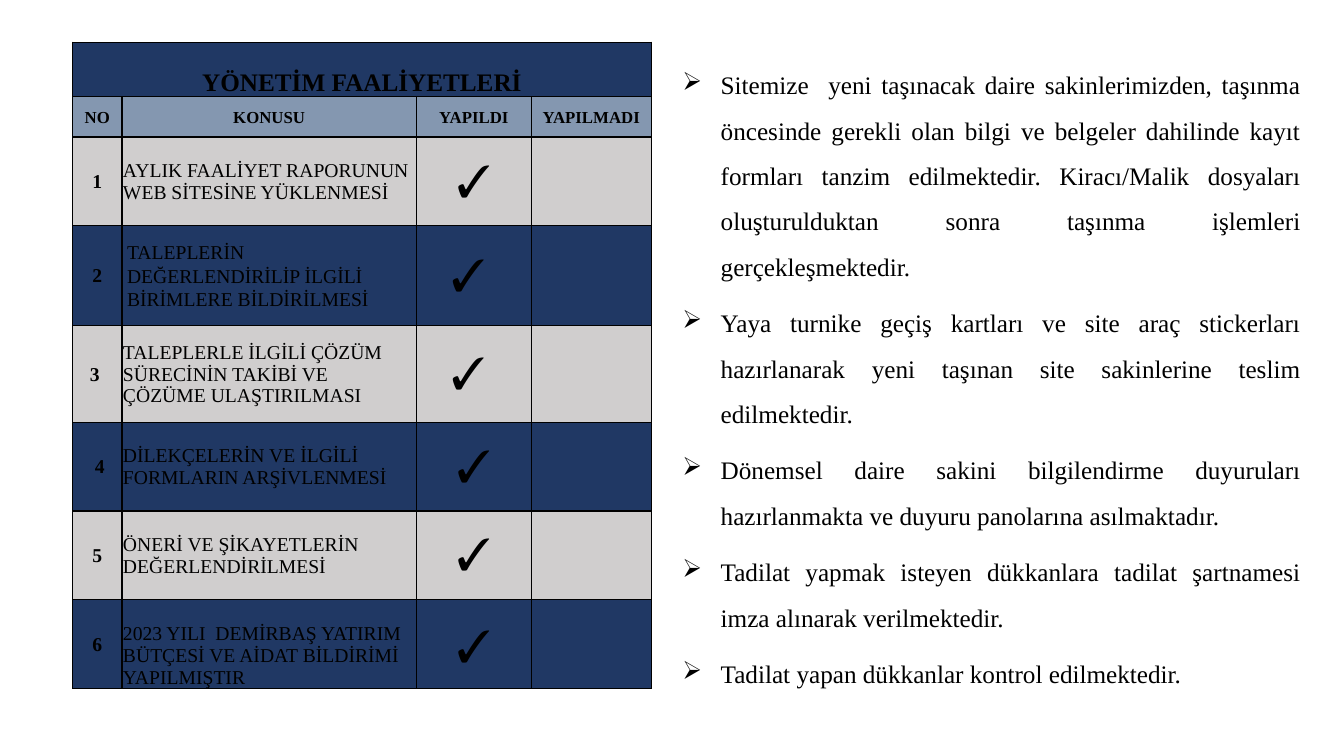
"""Builds the slide on site management activities: a checklist table and notes."""
from lxml import etree
from pptx import Presentation
from pptx.dml.color import RGBColor
from pptx.enum.text import MSO_ANCHOR, MSO_AUTO_SIZE, PP_ALIGN
from pptx.oxml.ns import qn
from pptx.util import Inches, Pt

CENTER, LEFT, JUSTIFY = PP_ALIGN.CENTER, PP_ALIGN.LEFT, PP_ALIGN.JUSTIFY
MIDDLE, BOTTOM = MSO_ANCHOR.MIDDLE, MSO_ANCHOR.BOTTOM
GROW = MSO_AUTO_SIZE.SHAPE_TO_FIT_TEXT

BLACK = RGBColor(0x00, 0x00, 0x00)
NAVY = RGBColor(0x20, 0x38, 0x64)
STEEL = RGBColor(0x84, 0x97, 0xB0)
GREY = RGBColor(0xD0, 0xCE, 0xCE)

TITLE = "YÖNETİM FAALİYETLERİ"
HEADINGS = ["NO", "KONUSU", "YAPILDI", "YAPILMADI"]
ACTIVITIES = [
    ("1", "AYLIK FAALİYET RAPORUNUN WEB SİTESİNE YÜKLENMESİ", "✓"),
    ("2", "TALEPLERİN DEĞERLENDİRİLİP İLGİLİ BİRİMLERE BİLDİRİLMESİ", "✓ "),
    ("3 ", "TALEPLERLE İLGİLİ ÇÖZÜM SÜRECİNİN TAKİBİ VE ÇÖZÜME ULAŞTIRILMASI", "✓ "),
    (" 4", "DİLEKÇELERİN VE İLGİLİ FORMLARIN ARŞİVLENMESİ", "✓"),
    ("5", "ÖNERİ VE ŞİKAYETLERİN DEĞERLENDİRİLMESİ", "✓"),
    ("6", "2023 YILI  DEMİRBAŞ YATIRIM BÜTÇESİ VE AİDAT BİLDİRİMİ YAPILMIŞTIR", "✓"),
]
NOTES = [
    "Sitemize  yeni taşınacak daire sakinlerimizden, taşınma öncesinde gerekli olan "
    "bilgi ve belgeler dahilinde kayıt formları tanzim edilmektedir. Kiracı/Malik "
    "dosyaları oluşturulduktan sonra taşınma işlemleri gerçekleşmektedir.",
    "Yaya turnike geçiş kartları ve site araç stickerları hazırlanarak yeni taşınan "
    "site sakinlerine teslim edilmektedir.",
    "Dönemsel daire sakini bilgilendirme duyuruları hazırlanmakta ve duyuru "
    "panolarına asılmaktadır.",
    "Tadilat yapmak isteyen dükkanlara tadilat şartnamesi imza alınarak verilmektedir.",
    "Tadilat yapan dükkanlar kontrol edilmektedir.",
]
COLUMN_WIDTHS = [0.49, 2.92, 1.14, 1.19]
ROW_HEIGHTS = [0.54, 0.4, 0.88, 0.99, 0.96, 0.88, 0.88, 0.88]
TIGHT = (0.01, 0.01, 0.01, 0)
ROOMY = (0.05, 0, 0.05, 0)
RAISED = (0.01, 0.01, 0.01, 0.16)


def apply(target, values):
    """Set each named attribute on the target."""
    for name, value in values.items():
        setattr(target, name, value)


class ActivitySlide:
    """Holds the text style and the slide being filled."""

    font_name = "Times New Roman"
    ink = BLACK

    def __init__(self, slide):
        """Keep the slide to draw on."""
        self.slide = slide

    def style(self, paragraph, size, bold=False, **layout):
        """Format one paragraph and its font."""
        apply(paragraph, layout)
        apply(paragraph.font, {"name": self.font_name, "size": Pt(size), "bold": bold})
        paragraph.font.color.rgb = self.ink

    def border(self, cell):
        """Draw a thin line on all four sides of a cell."""
        properties = cell._tc.get_or_add_tcPr()
        for side in ("a:lnL", "a:lnR", "a:lnT", "a:lnB"):
            line = etree.SubElement(properties, qn(side), w=str(Pt(1)))
            fill = etree.SubElement(line, qn("a:solidFill"))
            etree.SubElement(fill, qn("a:srgbClr"), val=str(self.ink))

    def table(self, left, top, widths, heights):
        """Add a plain table with the given column widths and row heights."""
        table = self.slide.shapes.add_table(
            len(heights), len(widths), Inches(left), Inches(top),
            Inches(sum(widths)), Inches(sum(heights))).table
        apply(table, {"first_row": False, "horz_banding": False})
        for column, width in zip(table.columns, widths):
            column.width = Inches(width)
        for row, height in zip(table.rows, heights):
            row.height = Inches(height)
        for cell in table.iter_cells():
            self.border(cell)
        return table

    def cell(self, cell, fill, text="", size=14, bold=False, align=CENTER,
             anchor=MIDDLE, insets=TIGHT, spacing=1.0):
        """Fill a cell and write its text."""
        cell.fill.solid()
        cell.fill.fore_color.rgb = fill
        sides = ("margin_left", "margin_top", "margin_right", "margin_bottom")
        apply(cell, dict(zip(sides, map(Inches, insets)), vertical_anchor=anchor))
        if text:
            cell.text = text
            self.style(cell.text_frame.paragraphs[0], size, bold,
                       alignment=align, line_spacing=spacing)

    def bullets(self, left, top, width, height, items):
        """Add a text box of justified arrow bullets."""
        frame = self.slide.shapes.add_textbox(
            Inches(left), Inches(top), Inches(width), Inches(height)).text_frame
        apply(frame, {"word_wrap": True, "auto_size": GROW, "text": "\n".join(items)})
        for paragraph in frame.paragraphs:
            properties = paragraph._p.get_or_add_pPr()
            apply(paragraph, {"line_spacing": 1.5, "space_after": Pt(8)})
            etree.SubElement(properties, qn("a:buChar"), char="➢")
            properties.set("marL", str(Inches(0.38)))
            properties.set("indent", str(Inches(-0.38)))
            self.style(paragraph, 18, alignment=JUSTIFY)


def main():
    """Build and save the presentation."""
    deck = Presentation()
    apply(deck, {"slide_width": Inches(13.33), "slide_height": Inches(7.5)})
    page = ActivitySlide(deck.slides.add_slide(deck.slide_layouts[6]))

    checklist = page.table(0.72, 0.42, COLUMN_WIDTHS, ROW_HEIGHTS)
    checklist.cell(0, 0).merge(checklist.cell(0, len(HEADINGS) - 1))
    page.cell(checklist.cell(0, 0), NAVY, TITLE, 18, True, anchor=BOTTOM)
    for column, heading in enumerate(HEADINGS):
        roomy = {"insets": ROOMY, "spacing": 1.07} if heading == "KONUSU" else {}
        page.cell(checklist.cell(1, column), STEEL, heading, 12, True, **roomy)

    topic_formats = {"2": {"insets": ROOMY, "spacing": 1.07}, "6": {"anchor": BOTTOM}}
    check_formats = {"6": {"anchor": BOTTOM, "insets": RAISED}}
    for row, (number, topic, check) in enumerate(ACTIVITIES, start=2):
        fill = NAVY if row % 2 else GREY
        page.cell(checklist.cell(row, 0), fill, number, bold=True)
        page.cell(checklist.cell(row, 1), fill, topic, align=LEFT,
                  **topic_formats.get(number, {}))
        page.cell(checklist.cell(row, 2), fill, check, 32,
                  **check_formats.get(number, {}))
        page.cell(checklist.cell(row, 3), fill)

    page.bullets(6.67, 0.49, 6.33, 7.54, NOTES)
    deck.save("out.pptx")


if __name__ == "__main__":
    main()
